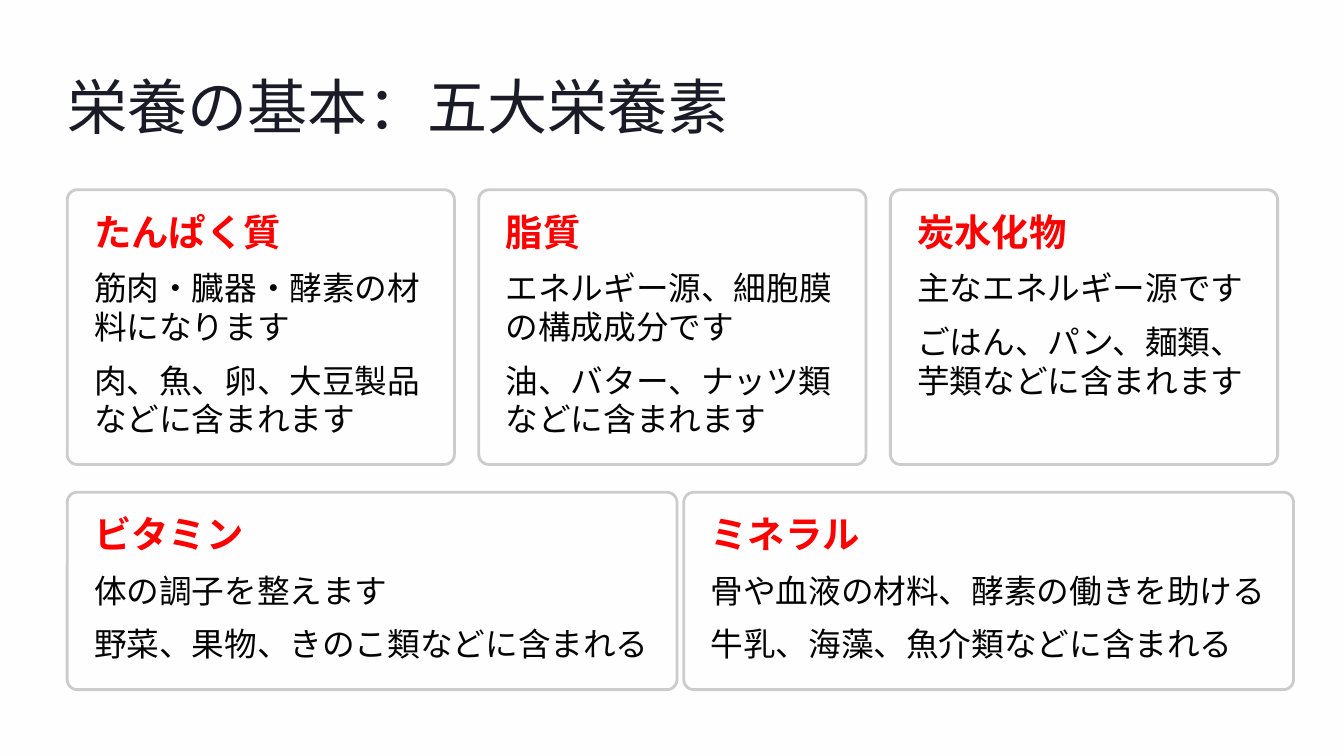
from pptx import Presentation
from pptx.dml.color import RGBColor
from pptx.enum.shapes import MSO_SHAPE
from pptx.oxml.ns import qn
from pptx.util import Inches, Pt
from lxml import etree

ROUNDED = MSO_SHAPE.ROUNDED_RECTANGLE
BACKGROUND = RGBColor(0xFE, 0xFE, 0xFE)
WHITE = RGBColor(0xFF, 0xFF, 0xFF)
BORDER = RGBColor(0xCC, 0xCC, 0xCC)
INK = RGBColor(0x1B, 0x1B, 0x27)
RED = RGBColor(0xFF, 0x00, 0x00)
BODY = RGBColor(0x03, 0x03, 0x03)

LEFT = 0.8
PAD = 0.32
RADIUS = 0.12
LINE_HEIGHT = 0.46
PARAGRAPH_GAP = 0.18

ROWS = [
    {"top": 2.26, "width": 4.61, "height": 3.27, "step": 4.9, "text_width": 3.96,
     "cards": [
         ("たんぱく質", [("筋肉・臓器・酵素の材料になります", 2),
                    ("肉、魚、卵、大豆製品などに含まれます", 2)]),
         ("脂質", [("エネルギー源、細胞膜の構成成分です", 2),
                 ("油、バター、ナッツ類などに含まれます", 2)]),
         ("炭水化物", [("主なエネルギー源です", 1),
                   ("ごはん、パン、麺類、芋類などに含まれます", 2)]),
     ]},
    {"top": 5.86, "width": 7.26, "height": 2.35, "step": 7.34, "text_width": 6.7,
     "cards": [
         ("ビタミン", [("体の調子を整えます", 1),
                   ("野菜、果物、きのこ類などに含まれる", 1)]),
         ("ミネラル", [("骨や血液の材料、酵素の働きを助ける", 1),
                   ("牛乳、海藻、魚介類などに含まれる", 1)]),
     ]},
]


class Deck:
    heading_font = "Inter"
    body_font = "Lato"

    def __init__(self, slide):
        self.s = slide
        fill = slide.background.fill
        fill.solid()
        fill.fore_color.rgb = BACKGROUND

    def text(self, x, y, w, h, text, size, spacing, font, color, bold=False, wrap=False):
        tf = self.s.shapes.add_textbox(Inches(x), Inches(y), Inches(w), Inches(h)).text_frame
        tf.margin_left = tf.margin_top = tf.margin_right = tf.margin_bottom = 0
        tf.word_wrap = wrap
        p = tf.paragraphs[0]
        p.text = text
        p.line_spacing = Pt(spacing)
        p.font.size = Pt(size)
        p.font.name = font
        p.font.bold = bold
        p.font.color.rgb = color

    def title(self, text):
        self.text(LEFT, 0.79, 7.9, 0.9, text, 51.5, 64.5, self.heading_font, INK)

    def panel(self, x, y, w, h):
        sp = self.s.shapes.add_shape(ROUNDED, Inches(x), Inches(y), Inches(w), Inches(h))
        sp.adjustments[0] = RADIUS / h
        sp.shadow.inherit = False
        sp.fill.solid()
        sp.fill.fore_color.rgb = WHITE
        color = sp.fill._xPr.find(qn("a:solidFill"))[0]
        etree.SubElement(color, qn("a:alpha"), val="95000")
        sp.line.color.rgb = BORDER
        sp.line.width = Pt(2.4)

    def card(self, x, y, w, h, text_width, heading, paragraphs):
        self.panel(x, y, w, h)
        x += PAD
        self.text(x, y + PAD, 3.59, 0.45, heading, 32, 32, self.heading_font, RED, bold=True)
        y += 0.94
        for text, lines in paragraphs:
            height = lines * LINE_HEIGHT
            self.text(x, y, text_width, height, text, 28, 33, self.body_font, BODY, wrap=True)
            y += height + PARAGRAPH_GAP


def main():
    prs = Presentation()
    prs.slide_width, prs.slide_height = Inches(16), Inches(9)
    deck = Deck(prs.slides.add_slide(prs.slide_layouts[6]))
    deck.title("栄養の基本：五大栄養素")
    for row in ROWS:
        for i, (heading, paragraphs) in enumerate(row["cards"]):
            deck.card(LEFT + i * row["step"], row["top"], row["width"], row["height"],
                      row["text_width"], heading, paragraphs)
    prs.save("out.pptx")


if __name__ == "__main__":
    main()
